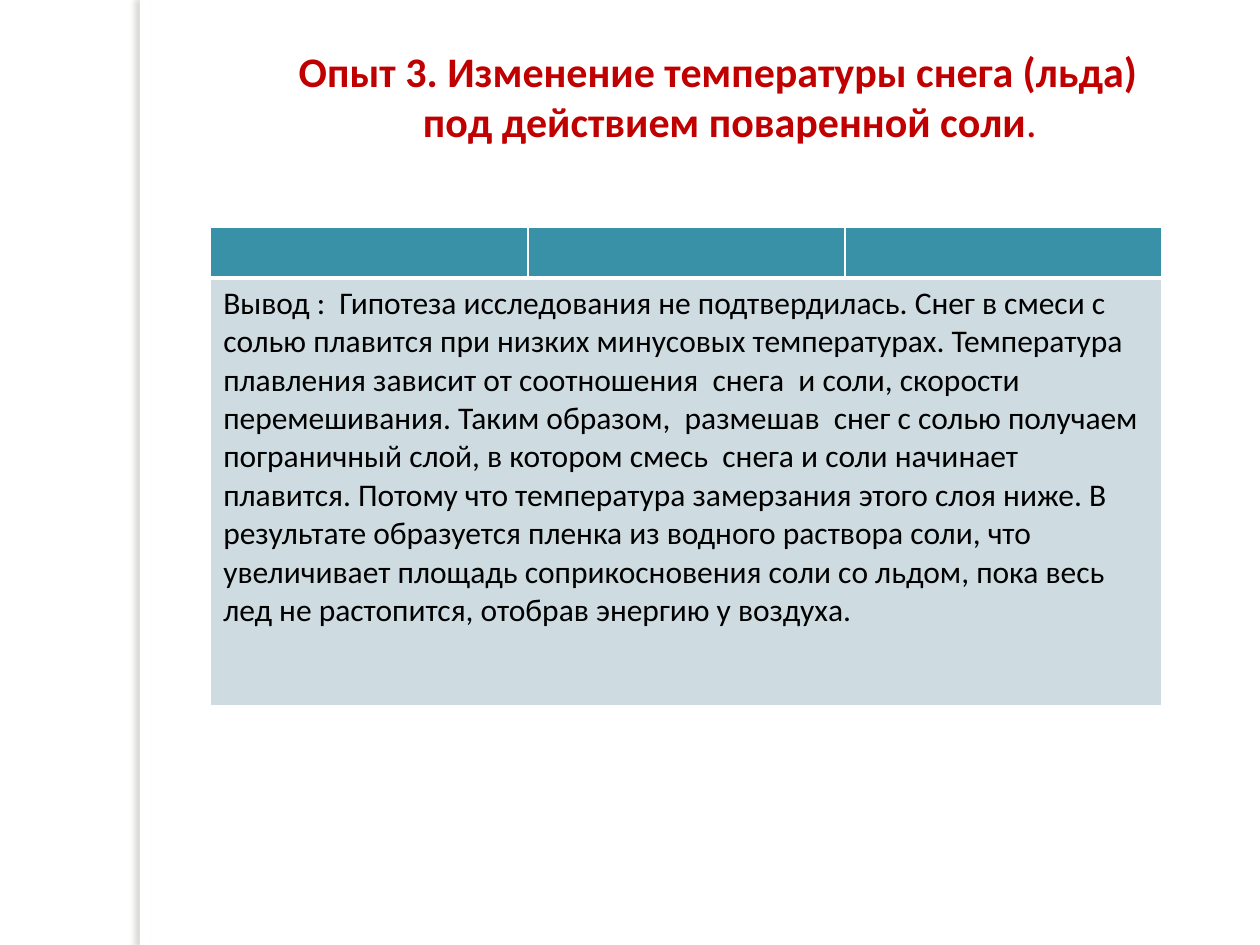
from dataclasses import dataclass

import pptx
import pptx.dml.color
import pptx.enum.shapes
import pptx.enum.text
import pptx.oxml
import pptx.oxml.ns
import pptx.util

Pt = pptx.util.Pt
FONT = "Calibri"
COLORS = {
    "white": "FFFFFF",
    "title": "C00000",
    "text": "000000",
    "header": "3891A7",
    "body": "CEDCE1",
    "shadow": "736F63",
}
CONCLUSION = (
    "Вывод :  Гипотеза исследования не подтвердилась. Снег в смеси с солью "
    "плавится при низких минусовых температурах. Температура плавления зависит "
    "от соотношения  снега  и соли, скорости перемешивания. Таким образом,  "
    "размешав  снег с солью получаем пограничный слой, в котором смесь  снега "
    "и соли начинает плавится. Потому что температура замерзания этого слоя "
    "ниже. В результате образуется пленка из водного раствора соли, что "
    "увеличивает площадь соприкосновения соли со льдом, пока весь лед не "
    "растопится, отобрав энергию у воздуха."
)


@dataclass
class TitleLine:
    text: str
    indent: float
    ending: str = ""


@dataclass
class RowStyle:
    height: float
    fill: str
    bottom_border: float


TITLE_LINES = [
    TitleLine("Опыт 3. Изменение температуры снега (льда)", 0),
    TitleLine("под действием поваренной соли", 71, "."),
]
ROWS = [RowStyle(29.2, "header", 3), RowStyle(244.4, "body", 1)]
COLUMN_COUNT = 3


def rgb(name: str) -> pptx.dml.color.RGBColor:
    return pptx.dml.color.RGBColor.from_string(COLORS[name])


def set_font(font, size: float, color: str, bold: bool = False) -> None:
    font.name, font.size, font.bold = FONT, Pt(size), bold
    font.color.rgb = rgb(color)


def add_side_strip(slide) -> None:
    strip = slide.shapes.add_shape(
        pptx.enum.shapes.MSO_SHAPE.RECTANGLE, Pt(80), 0, Pt(6), Pt(540))
    strip.fill.solid()
    strip.fill.fore_color.rgb = rgb("white")
    strip.line.fill.background()
    strip.shadow.inherit = False
    effects = strip._element.spPr.find(pptx.oxml.ns.qn("a:effectLst"))
    effects.append(pptx.oxml.parse_xml(
        f'<a:outerShdw {pptx.oxml.ns.nsdecls("a")} blurRad="{Pt(3)}" '
        f'dist="{Pt(3)}" dir="10800000" algn="tl" rotWithShape="0">'
        f'<a:srgbClr val="{COLORS["shadow"]}"><a:alpha val="25000"/></a:srgbClr>'
        '</a:outerShdw>'))
    slide.shapes._spTree.insert(2, strip._element)


def write_title(title, lines: list[TitleLine]) -> None:
    title.left, title.top = Pt(163.5), Pt(22.3)
    title.width, title.height = Pt(496), Pt(65.5)
    frame = title.text_frame
    frame.word_wrap = True
    frame.auto_size = pptx.enum.text.MSO_AUTO_SIZE.NONE
    frame.vertical_anchor = pptx.enum.text.MSO_ANCHOR.TOP
    for index, line in enumerate(lines):
        paragraph = frame.paragraphs[0] if index == 0 else frame.add_paragraph()
        paragraph.alignment = pptx.enum.text.PP_ALIGN.LEFT
        paragraph._p.get_or_add_pPr().set("marL", str(Pt(line.indent)))
        set_font(paragraph.font, 24, "title", bold=True)
        paragraph.add_run().text = line.text
        if line.ending:
            ending = paragraph.add_run()
            ending.text = line.ending
            ending.font.bold = False


def style_cell(cell, row: RowStyle) -> None:
    properties = cell._tc.get_or_add_tcPr()
    for side, width in zip("LRTB", (1, 1, 1, row.bottom_border)):
        properties.append(pptx.oxml.parse_xml(
            f'<a:ln{side} {pptx.oxml.ns.nsdecls("a")} w="{Pt(width)}"><a:solidFill>'
            f'<a:srgbClr val="{COLORS["white"]}"/></a:solidFill></a:ln{side}>'))
    cell.fill.solid()
    cell.fill.fore_color.rgb = rgb(row.fill)


def add_conclusion_table(slide) -> None:
    height = sum(row.height for row in ROWS)
    table = slide.shapes.add_table(
        len(ROWS), COLUMN_COUNT, Pt(120.4), Pt(129.6), Pt(543.6), Pt(height)).table
    for row_index, row in enumerate(ROWS):
        table.rows[row_index].height = Pt(row.height)
        for column in range(COLUMN_COUNT):
            style_cell(table.cell(row_index, column), row)
    conclusion = table.cell(1, 0)
    conclusion.merge(table.cell(1, COLUMN_COUNT - 1))
    conclusion.text = CONCLUSION
    set_font(conclusion.text_frame.paragraphs[0].font, 18, "text")


def main() -> None:
    presentation = pptx.Presentation()
    presentation.slide_width, presentation.slide_height = Pt(720), Pt(540)
    slide = presentation.slides.add_slide(
        presentation.slide_layouts.get_by_name("Title Only"))

    # Background and side strip
    slide.background.fill.solid()
    slide.background.fill.fore_color.rgb = rgb("white")
    add_side_strip(slide)

    # Heading and conclusion
    write_title(slide.shapes.title, TITLE_LINES)
    add_conclusion_table(slide)

    presentation.save("out.pptx")


if __name__ == "__main__":
    main()
